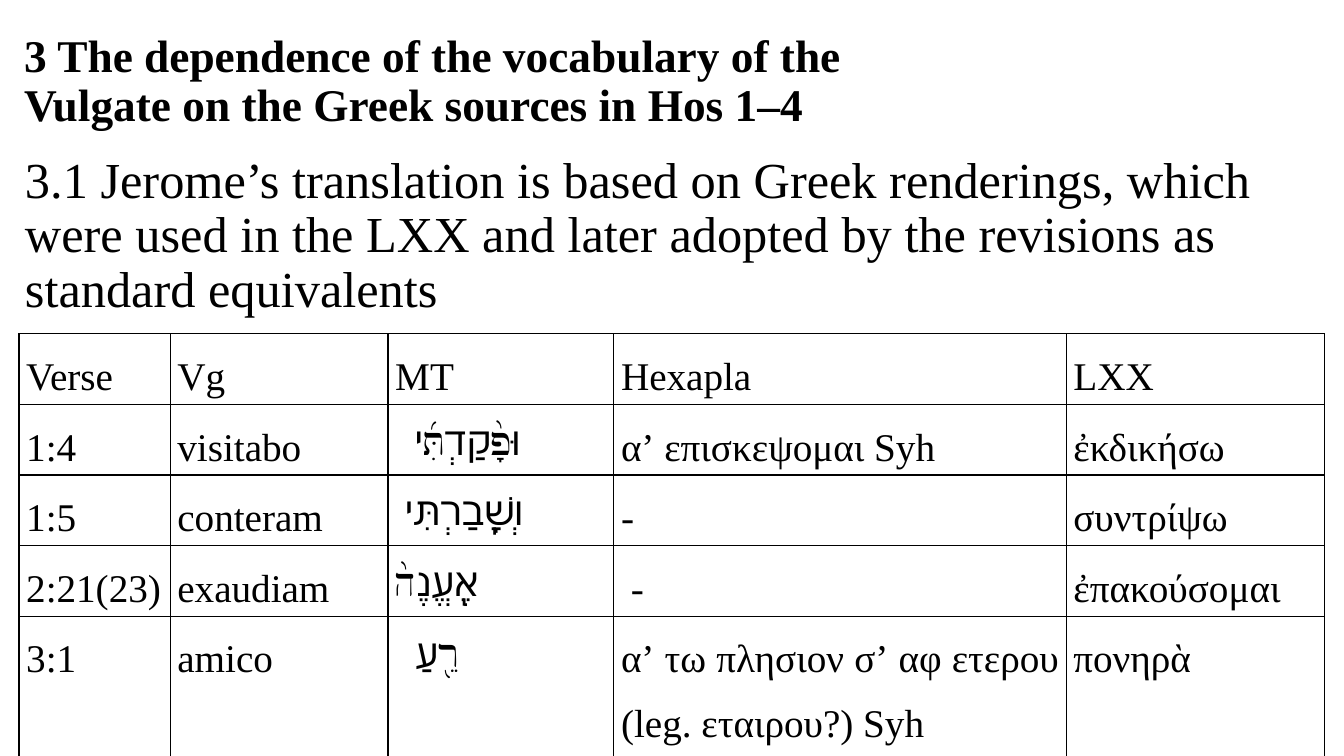
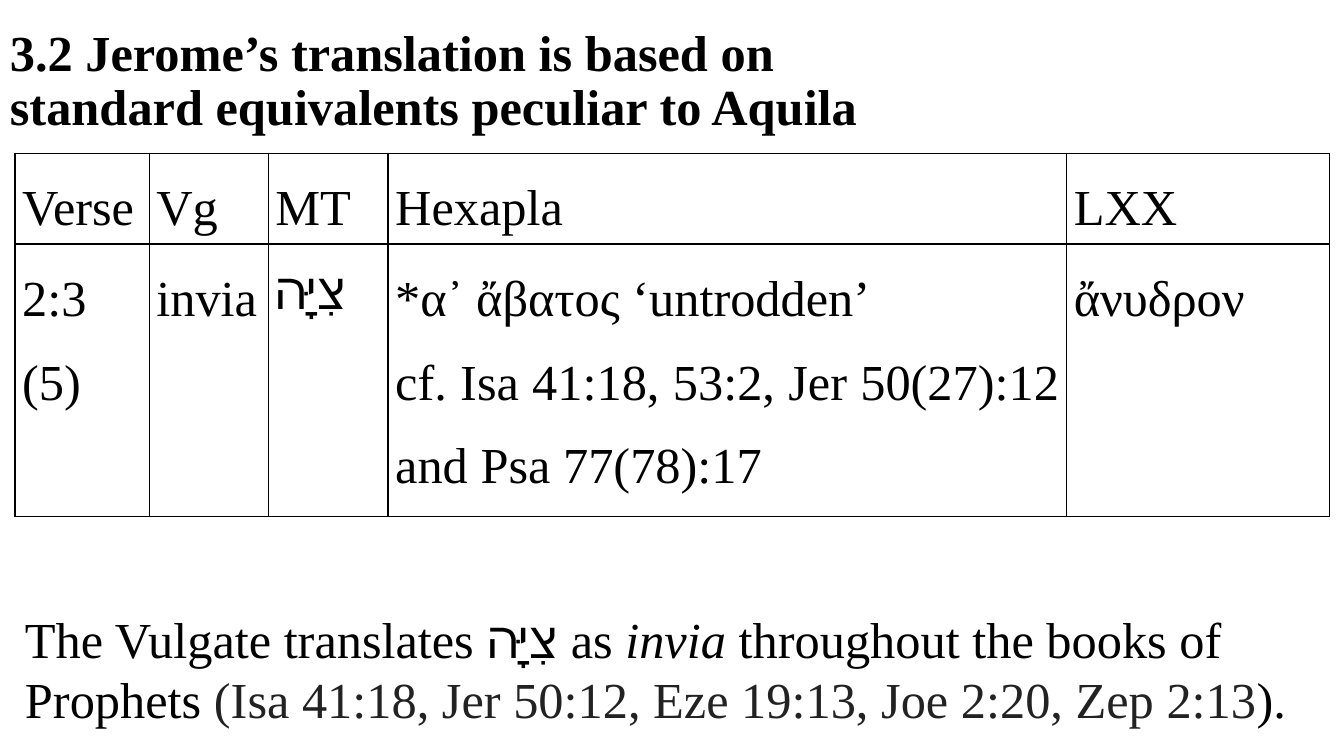
from lxml import etree
from pptx import Presentation
from pptx import util as u
from pptx.dml import color
from pptx.enum import text
from pptx.oxml import ns

FONT = "Times New Roman"
BLACK = "000000"
CITATION = "222222"
HEADER = ["Verse", "Vg", "MT", "Hexapla", "LXX"]


def rgb(value):
    return color.RGBColor.from_string(value)


def style_run(r, size, colour=BLACK, bold=False, italic=False):
    r.font.name = FONT
    r.font.size = u.Pt(size)
    r.font.bold = bold
    r.font.italic = italic
    r.font.color.rgb = rgb(colour)


def add_text_box(s, left, top, width, height):
    sp = s.shapes.add_textbox(u.Cm(left), u.Cm(top), u.Cm(width), u.Cm(height))
    sp.text_frame.word_wrap = True
    return sp.text_frame


def add_paragraph_box(s, box, content, size, bold=False):
    tf = add_text_box(s, *box)
    tf.text = content
    p = tf.paragraphs[0]
    p.line_spacing = 0.9
    style_run(p.runs[0], size, bold=bold)
    return tf


def add_title(s, box, content, size):
    tf = add_paragraph_box(s, box, content, size, bold=True)
    tf.vertical_anchor = text.MSO_ANCHOR.MIDDLE


def add_mixed_text(s, box, size, parts):
    p = add_text_box(s, *box).paragraphs[0]
    for content, look in parts:
        r = p.add_run()
        r.text = content
        style_run(r, size, **look)


def set_borders(cell):
    tc_pr = cell._tc.get_or_add_tcPr()
    for i, side in enumerate(("lnL", "lnR", "lnT", "lnB")):
        line = etree.Element(ns.qn(f"a:{side}"), w=str(u.Pt(1)))
        fill = etree.SubElement(line, ns.qn("a:solidFill"))
        etree.SubElement(fill, ns.qn("a:srgbClr"), val=BLACK)
        tc_pr.insert(i, line)


def fill_cell(cell, content, size, indent):
    cell.margin_left = u.Cm(0.18 + indent)
    cell.margin_right = u.Cm(0.18)
    cell.margin_top = cell.margin_bottom = 0
    cell.fill.background()
    set_borders(cell)
    cell.text_frame.text = content
    for p in cell.text_frame.paragraphs:
        p.alignment = text.PP_ALIGN.JUSTIFY
        p.line_spacing = 1.5
        for r in p.runs:
            style_run(r, size)


def add_verse_table(s, left, top, widths, heights, size, verses, indents={}):
    rows = [HEADER] + verses
    table = s.shapes.add_table(
        len(rows), len(widths), u.Cm(left), u.Cm(top),
        u.Cm(sum(widths)), u.Cm(sum(heights))).table
    table.first_row = table.horz_banding = False
    for column, width in zip(table.columns, widths):
        column.width = u.Cm(width)
    for i, (row, height) in enumerate(zip(rows, heights)):
        table.rows[i].height = u.Cm(height)
        for j, content in enumerate(row):
            fill_cell(table.cell(i, j), content, size, indents.get((i, j), 0))


def build_greek_sources(s):
    add_title(s, (0.36, 0.36, 23.32, 3.45),
              "3 The dependence of the vocabulary of the Vulgate on the "
              "Greek sources in Hos 1–4", 32.4)
    tf = add_paragraph_box(
        s, (0.38, 3.78, 33.15, 4.5),
        "3.1 Jerome’s translation is based on Greek renderings, which were "
        "used in the LXX and later adopted by the revisions as standard "
        "equivalents", 36)
    tf.paragraphs[0].space_before = u.Pt(10)
    verses = [
        ["1:4", "visitabo", "וּפָ֙קַדְתִּ֜י", "αʼ επισκεψομαι Syh", "ἐκδικήσω"],
        ["1:5", "conteram", "וְשָֽׁבַרְתִּי", "-", "συντρίψω"],
        ["2:21(23)", "exaudiam", "אֶֽעֱנֶה֙", "-", "ἐπακούσομαι"],
        ["3:1", "amico", "רֵ֖עַ",
         "αʼ τω πλησιον σʼ αφ ετερου (leg. εταιρου?) Syh", "πονηρὰ"],
    ]
    indents = {(1, 2): 0.5, (2, 2): 0.25, (3, 3): 0.25, (4, 2): 0.5}
    add_verse_table(s, 0.48, 8.41, [3.81, 5.49, 5.69, 11.4, 6.5],
                    [1.6] * 4 + [3.2], 28, verses, indents)


def build_aquila(s):
    add_title(s, (0, 0.41, 22.83, 3.33),
              "3.2 Jerome’s translation is based on standard equivalents "
              "peculiar to Aquila", 36)
    verses = [["2:3\n(5)", "invia", "צִיָּה",
               "*α᾽ ἄβατος ‘untrodden’\n"
               "cf. Isa 41:18, 53:2, Jer 50(27):12 and Psa 77(78):17",
               "ἄνυδρον"]]
    add_verse_table(s, 0.38, 3.86, [3.38, 3, 3.02, 17.1, 6.63],
                    [2.1, 6.3], 36, verses)
    add_mixed_text(s, (0.38, 15.19, 33.12, 3.33), 36, [
        ("The Vulgate translates צִיָּה as ", {}),
        ("invia", {"italic": True}),
        (" throughout the books of Prophets", {}),
        (" (Isa 41:18, Jer 50:12, Eze 19:13, Joe 2:20, Zep 2:13",
         {"colour": CITATION}),
        (").", {}),
    ])


def main():
    prs = Presentation()
    prs.slide_width = u.Cm(33.87)
    prs.slide_height = u.Cm(19.05)
    for build in (build_greek_sources, build_aquila):
        build(prs.slides.add_slide(prs.slide_layouts[6]))
    prs.save("out.pptx")


if __name__ == "__main__":
    main()
